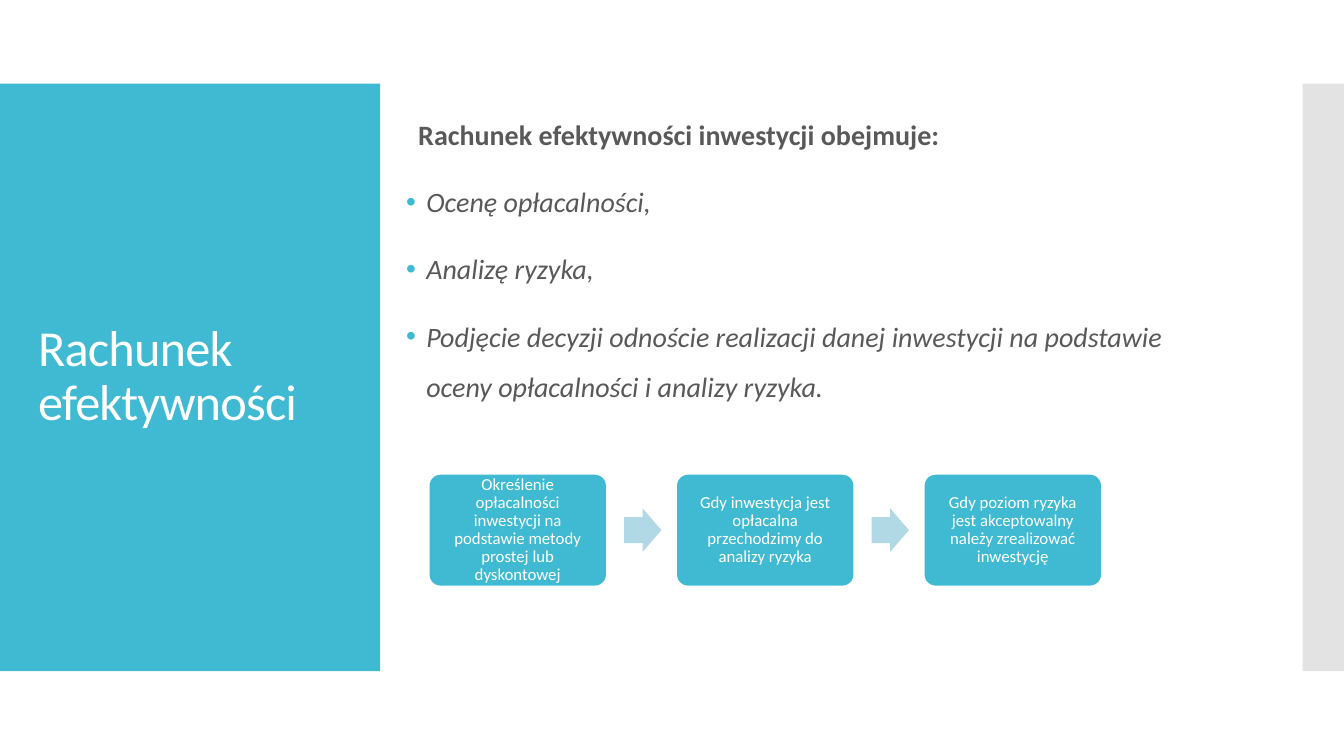
from lxml import etree
from pptx import Presentation
from pptx import util as u
from pptx.dml.color import RGBColor
from pptx.enum import shapes, text
from pptx.oxml import ns

PX = 9144  # EMU per px, 100 px to the inch
FONT = "Calibri"
TEAL = RGBColor(0x40, 0xBA, 0xD2)
PALE_TEAL = RGBColor(0xB0, 0xD9, 0xE5)
SILVER = RGBColor(0xC8, 0xC8, 0xC8)
DARK_GREY = RGBColor(0x59, 0x59, 0x59)
WHITE = RGBColor(0xFF, 0xFF, 0xFF)

TITLE = "Rachunek efektywności"
HEADING = "Rachunek efektywności inwestycji obejmuje:"
BULLETS = [
    "Ocenę opłacalności,",
    "Analizę ryzyka,",
    "Podjęcie decyzji odnoście realizacji danej inwestycji na podstawie "
    "oceny opłacalności i analizy ryzyka.",
]
STEPS = [
    "Określenie opłacalności inwestycji na podstawie metody prostej lub dyskontowej",
    "Gdy inwestycja jest opłacalna przechodzimy do analizy ryzyka",
    "Gdy poziom ryzyka jest akceptowalny należy zrealizować inwestycję",
]


def px(*lengths):
    return [u.Emu(int(length * PX)) for length in lengths]


def add_filled(slide, kind, box, color):
    shape = slide.shapes.add_shape(kind, *px(*box))
    shape.shadow.inherit = False
    shape.fill.solid()
    shape.fill.fore_color.rgb = color
    shape.line.fill.background()
    return shape


def add_text_box(slide, box):
    frame = slide.shapes.add_textbox(*px(*box)).text_frame
    frame.word_wrap = True
    frame.vertical_anchor = text.MSO_ANCHOR.MIDDLE
    return frame


def format_runs(paragraph, size, color, bold=False, italic=False):
    for run in paragraph.runs:
        run.font.name = FONT
        run.font.size = u.Pt(size)
        run.font.color.rgb = color
        run.font.bold = bold
        run.font.italic = italic


def set_indent(paragraph, margin, indent):
    properties = paragraph._p.get_or_add_pPr()
    properties.set("marL", str(margin * PX))
    properties.set("indent", str(indent * PX))
    return properties


def add_bullet(paragraph):
    properties = set_indent(paragraph, 20, -20)
    color = etree.SubElement(properties, ns.qn("a:buClr"))
    etree.SubElement(color, ns.qn("a:srgbClr"), val=str(TEAL))
    etree.SubElement(properties, ns.qn("a:buFont"), typeface="Arial")
    etree.SubElement(properties, ns.qn("a:buChar"), char="•")


def add_title_panel(slide, left, top, width, height):
    add_filled(slide, shapes.MSO_SHAPE.RECTANGLE, (left, top, width, height), TEAL)
    frame = add_text_box(slide, (left + 28, top + 40, width - 55, height - 80))
    frame.text = TITLE
    paragraph = frame.paragraphs[0]
    paragraph.line_spacing = 0.9
    format_runs(paragraph, 36, WHITE)
    paragraph.runs[0].font._element.set("spc", "-60")


def add_side_strip(slide, *box):
    strip = add_filled(slide, shapes.MSO_SHAPE.RECTANGLE, box, SILVER)
    color = strip._element.spPr.find(".//" + ns.qn("a:srgbClr"))
    etree.SubElement(color, ns.qn("a:alpha"), val="50000")


def add_body(slide, *box):
    frame = add_text_box(slide, box)
    frame.text = "\n".join([HEADING] + BULLETS)
    for index, paragraph in enumerate(frame.paragraphs):
        is_heading = index == 0
        paragraph.line_spacing = 1.5
        paragraph.space_before = u.Pt(12)
        format_runs(paragraph, 20, DARK_GREY, bold=is_heading, italic=not is_heading)
        if is_heading:
            set_indent(paragraph, 12, 0)
        else:
            add_bullet(paragraph)


def add_step(slide, label, *box):
    card = add_filled(slide, shapes.MSO_SHAPE.ROUNDED_RECTANGLE, box, TEAL)
    card.adjustments[0] = 0.1
    frame = card.text_frame
    frame.word_wrap = True
    frame.vertical_anchor = text.MSO_ANCHOR.MIDDLE
    frame.margin_left = frame.margin_right = u.Emu(8 * PX)
    frame.margin_top = frame.margin_bottom = u.Emu(8 * PX)
    frame.text = label
    paragraph = frame.paragraphs[0]
    paragraph.alignment = text.PP_ALIGN.CENTER
    paragraph.line_spacing = 0.9
    format_runs(paragraph, 12, WHITE)


def add_process(slide, left, top, width, height):
    card_width, arrow_width, arrow_height = 175, 37, 43
    pitch = (width - card_width) / (len(STEPS) - 1)
    for index, label in enumerate(STEPS):
        card_left = left + index * pitch
        add_step(slide, label, card_left, top, card_width, height)
        if index < len(STEPS) - 1:
            arrow_box = (card_left + card_width + 18, top + (height - arrow_height) / 2,
                         arrow_width, arrow_height)
            arrow = add_filled(slide, shapes.MSO_SHAPE.RIGHT_ARROW, arrow_box, PALE_TEAL)
            arrow.adjustments[0] = 0.6
            arrow.adjustments[1] = 0.5


def main():
    presentation = Presentation()
    presentation.slide_width, presentation.slide_height = px(1333, 750)
    slide = presentation.slides.add_slide(presentation.slide_layouts[6])
    add_title_panel(slide, 0, 83, 377, 583)
    add_side_strip(slide, 1292, 83, 41, 583)
    add_body(slide, 393, 11, 833, 478)
    add_process(slide, 426, 471, 666, 110)
    presentation.save("out.pptx")


if __name__ == "__main__":
    main()
